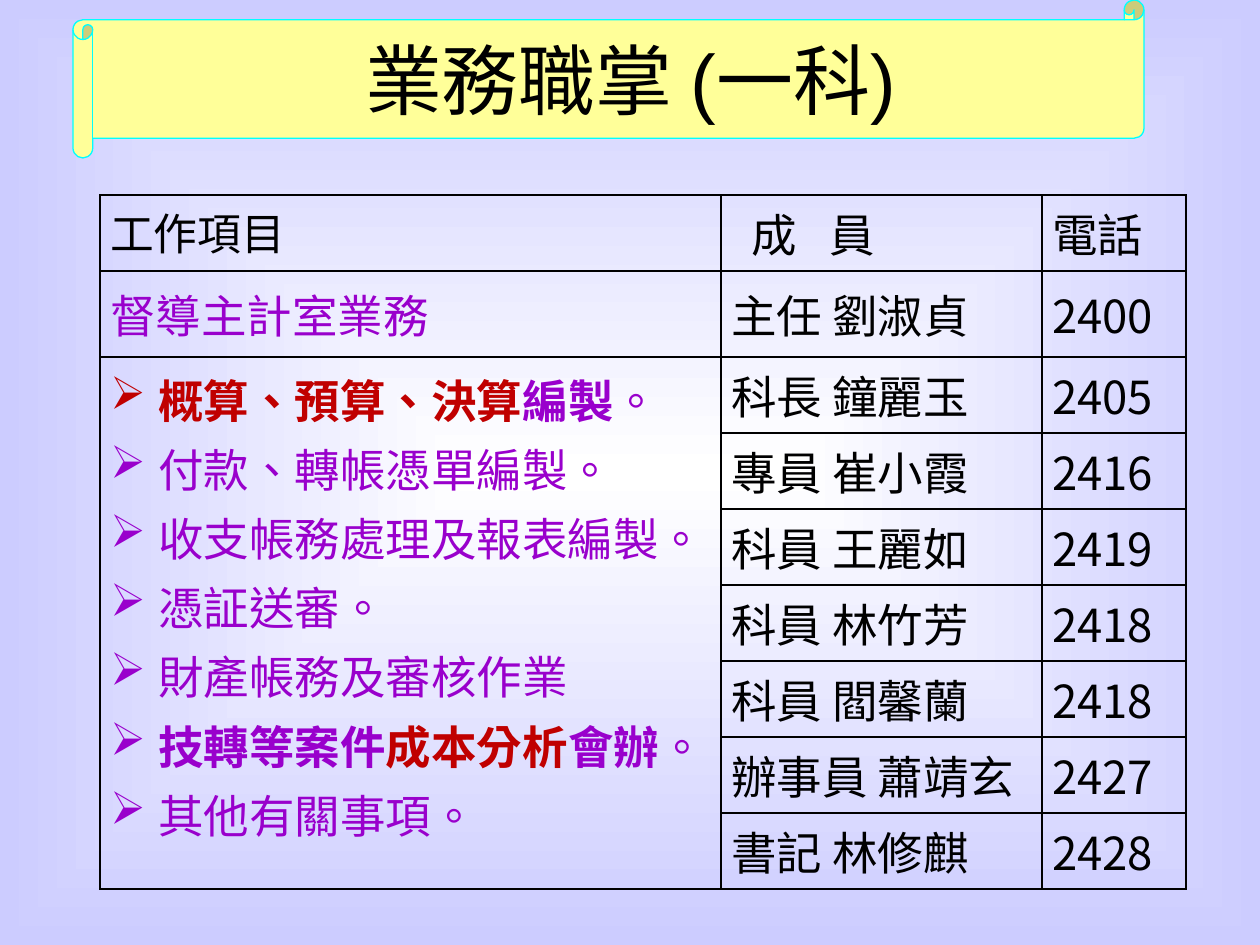
"""Build the slide that lists the duties, members and phones of section one."""
from lxml.etree import SubElement as Sub
from pptx import Presentation
from pptx.dml.color import RGBColor
from pptx.enum.shapes import MSO_SHAPE as SHAPE
from pptx.enum.text import MSO_ANCHOR as ANCHOR, PP_ALIGN as ALIGN
from pptx.oxml.ns import qn
from pptx.util import Emu, Inches, Pt

BLACK = RGBColor(0x00, 0x00, 0x00)
WHITE = RGBColor(0xFF, 0xFF, 0xFF)
LAVENDER = RGBColor(0xCC, 0xCC, 0xFF)
YELLOW = RGBColor(0xFF, 0xFF, 0x99)
CYAN = RGBColor(0x00, 0xFF, 0xFF)
PURPLE = RGBColor(0x99, 0x00, 0xCC)
RED = RGBColor(0xC0, 0x00, 0x00)
LATIN, CJK = "Calibri", "Noto Sans CJK SC"

MEMBERS = [
    ("科長 鐘麗玉", "2405"),
    ("專員 崔小霞", "2416"),
    ("科員 王麗如", "2419"),
    ("科員 林竹芳", "2418"),
    ("科員 閻馨蘭", "2418"),
    ("辦事員 蕭靖玄", "2427"),
    ("書記 林修麒", "2428"),
]
DUTIES = [
    [("概算、預算、決算", RED, True), ("編製", PURPLE, True), ("。", PURPLE, False)],
    [("付款、轉帳憑單編製。", PURPLE, False)],
    [("收支帳務處理及報表編製。", PURPLE, False)],
    [("憑証送審。", PURPLE, False)],
    [("財產帳務及審核作業", PURPLE, False)],
    [("技轉等案件", PURPLE, True), ("成本分析", RED, True),
     ("會辦", PURPLE, True), ("。", PURPLE, False)],
    [("其他有關事項。", PURPLE, False)],
]


def px(n):
    return Emu(round(n * 914400 / 126))


def add_text(p, text, size=26, color=BLACK, font=LATIN, bold=False, spacing=0):
    r = p.add_run()
    r.text = text
    r.font.size, r.font.name, r.font.bold = Pt(size), font, bold
    r.font.color.rgb = color
    rPr = r._r.get_or_add_rPr()
    rPr.set("lang", "zh-TW")
    if spacing:
        rPr.set("spc", str(spacing * 100))
    Sub(rPr, qn("a:ea"), typeface=CJK)


class SlideBuilder:
    def __init__(self, prs):
        self.s = prs.slides.add_slide(prs.slide_layouts[5])

    def background(self, inner, outer):
        fill = self.s.background.fill
        fill.gradient()
        for stop, color in zip(fill.gradient_stops, (inner, outer)):
            stop.color.rgb = color
        grad = self.s._element.find(".//" + qn("a:gradFill"))
        grad.remove(grad.find(qn("a:lin")))
        center = Sub(grad, qn("a:path"), path="shape")
        Sub(center, qn("a:fillToRect"), {side: "50000" for side in "ltrb"})

    def scroll(self, x, y, w, h):
        sp = self.s.shapes.add_shape(SHAPE.HORIZONTAL_SCROLL, px(x), px(y), px(w), px(h))
        sp.shadow.inherit = False
        sp.fill.solid()
        sp.fill.fore_color.rgb = YELLOW
        sp.line.color.rgb, sp.line.width = CYAN, Pt(0.75)
        self.s.shapes._spTree.insert(2, sp._element)

    def title(self, text, x, y, w, h):
        sp = self.s.shapes.title
        sp.left, sp.top, sp.width, sp.height = px(x), px(y), px(w), px(h)
        tf = sp.text_frame
        tf.vertical_anchor = ANCHOR.MIDDLE
        p = tf.paragraphs[0]
        p.alignment = ALIGN.CENTER
        add_text(p, text, size=44, font="Arial")

    def table(self, x, y, cols, rows):
        frame = self.s.shapes.add_table(len(rows), len(cols), px(x), px(y),
                                        px(sum(cols)), px(sum(rows)))
        tbl = frame.table
        tbl.first_row = tbl.horz_banding = False
        for col, w in zip(tbl.columns, cols):
            col.width = px(w)
        for row, h in zip(tbl.rows, rows):
            row.height = px(h)
        for cell in tbl.iter_cells():
            self.style_cell(cell)
        return tbl

    def style_cell(self, cell):
        cell.margin_left = cell.margin_right = Inches(0.08)
        cell.margin_top = cell.margin_bottom = Inches(0.04)
        cell.vertical_anchor = ANCHOR.MIDDLE
        tcPr = cell._tc.get_or_add_tcPr()
        for side in "LRTB":
            ln = Sub(tcPr, qn(f"a:ln{side}"), w=str(Pt(1)))
            Sub(Sub(ln, qn("a:solidFill")), qn("a:srgbClr"), val=str(BLACK))
        cell.fill.background()

    def bullets(self, cell, items):
        cell.vertical_anchor = ANCHOR.TOP
        tf = cell.text_frame
        for i, runs in enumerate(items):
            p = tf.add_paragraph() if i else tf.paragraphs[0]
            p.alignment, p.line_spacing = ALIGN.JUSTIFY, 1.05
            pPr = p._p.get_or_add_pPr()
            pPr.set("marL", str(px(48)))
            pPr.set("indent", str(px(-48)))
            Sub(pPr, qn("a:buChar"), char="➢")
            for text, color, bold in runs:
                add_text(p, text, color=color, bold=bold)


def main():
    prs = Presentation()
    prs.slide_width, prs.slide_height = Inches(10), Inches(7.5)
    b = SlideBuilder(prs)
    b.background(WHITE, LAVENDER)
    b.scroll(73, 0, 1071, 158)
    b.title("業務職掌 (一科)", 95, 0, 1071, 158)

    tbl = b.table(100, 195, [621, 321, 144], [76, 86] + [75] * len(MEMBERS))
    heads = [tbl.cell(0, c) for c in range(3)]
    for cell in heads:
        cell.vertical_anchor = ANCHOR.TOP
    work, member, phone = [cell.text_frame.paragraphs[0] for cell in heads]
    add_text(work, "工作項目", size=25)
    member._p.get_or_add_pPr().set("marL", str(px(20)))
    add_text(member, "成")
    add_text(member, " ", spacing=13)
    add_text(member, "員")
    add_text(phone, "電話")

    add_text(tbl.cell(1, 0).text_frame.paragraphs[0], "督導主計室業務", color=PURPLE)
    for i, (name, number) in enumerate([("主任 劉淑貞", "2400")] + MEMBERS, 1):
        add_text(tbl.cell(i, 1).text_frame.paragraphs[0], name)
        add_text(tbl.cell(i, 2).text_frame.paragraphs[0], number, font=CJK)

    tbl.cell(2, 0).merge(tbl.cell(len(MEMBERS) + 1, 0))
    b.bullets(tbl.cell(2, 0), DUTIES)
    prs.save("out.pptx")


if __name__ == "__main__":
    main()
